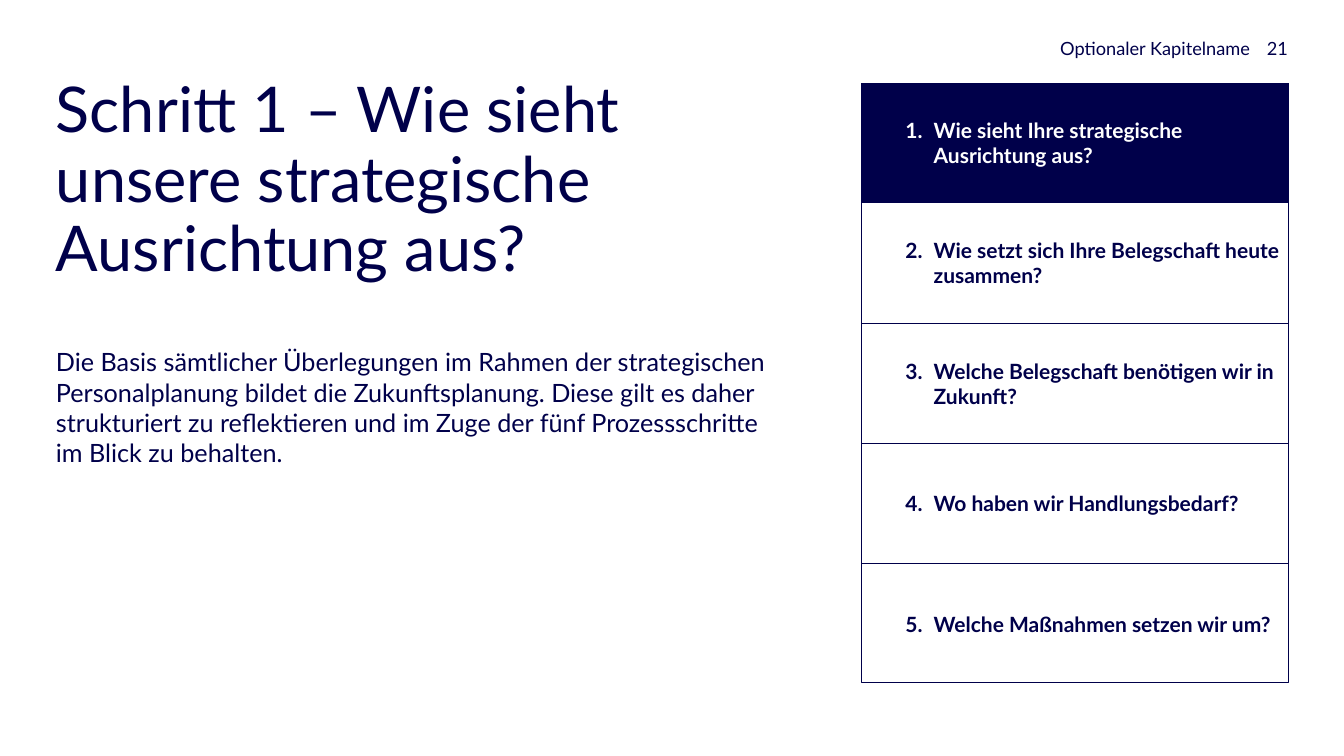
from dataclasses import dataclass

from lxml import etree
from pptx import Presentation
from pptx.dml.color import RGBColor
from pptx.enum.shapes import MSO_CONNECTOR, MSO_SHAPE
from pptx.enum.text import MSO_ANCHOR, MSO_AUTO_SIZE, PP_ALIGN
from pptx.oxml.ns import qn
from pptx.util import Emu, Pt

RECTANGLE = MSO_SHAPE.RECTANGLE
STRAIGHT = MSO_CONNECTOR.STRAIGHT
TOP, MIDDLE, BOTTOM = MSO_ANCHOR.TOP, MSO_ANCHOR.MIDDLE, MSO_ANCHOR.BOTTOM
LEFT, RIGHT = PP_ALIGN.LEFT, PP_ALIGN.RIGHT
NO_AUTOFIT = MSO_AUTO_SIZE.NONE

NAVY = RGBColor(0x00, 0x00, 0x4A)
WHITE = RGBColor(0xFF, 0xFF, 0xFF)
FONT = "Lato"
EMU_PER_PX = 9144  # 100 px to the inch

STEPS = [
    "Wie sieht Ihre strategische Ausrichtung aus?",
    "Wie setzt sich Ihre Belegschaft heute zusammen?",
    "Welche Belegschaft benötigen wir in Zukunft?",
    "Wo haben wir Handlungsbedarf?",
    "Welche Maßnahmen setzen wir um?",
]
ACTIVE_STEP = 1
STEP_HEIGHT = 235
LAST_STEP_OFFSET = 954
DIVIDER_GAP = 2
HANGING_INDENT = 56


@dataclass(frozen=True)
class Box:
    left: int
    top: int
    width: int
    height: int


@dataclass(frozen=True)
class TextStyle:
    size: int
    color: RGBColor = NAVY
    bold: bool = False
    anchor: MSO_ANCHOR = TOP
    align: PP_ALIGN = LEFT
    line_spacing: float = 1.0
    insets: tuple[int, int, int, int] = (0, 0, 0, 0)


@dataclass(frozen=True)
class Step:
    number: int
    text: str
    box: Box


PANEL = Box(1709, 166, 847, 1188)
HEADER_STYLE = TextStyle(26, anchor=BOTTOM, align=RIGHT)


def px(value: int) -> Emu:
    return Emu(value * EMU_PER_PX)


def edges(box: Box) -> tuple[Emu, Emu, Emu, Emu]:
    return px(box.left), px(box.top), px(box.width), px(box.height)


def set_values(target, values: dict) -> None:
    for name, value in values.items():
        setattr(target, name, value)


def set_bullet(paragraph, number: int | None, color: RGBColor) -> None:
    """Number the paragraph, or remove its bullet when number is None."""
    properties = paragraph._p.get_or_add_pPr()
    indent = 0 if number is None else px(HANGING_INDENT)
    properties.set("marL", str(indent))
    properties.set("indent", str(-indent))
    if number is None:
        etree.SubElement(properties, qn("a:buNone"))
        return
    bullet_color = etree.SubElement(properties, qn("a:buClr"))
    etree.SubElement(bullet_color, qn("a:srgbClr"), val=str(color))
    etree.SubElement(properties, qn("a:buFont"), typeface="+mj-lt")
    etree.SubElement(properties, qn("a:buAutoNum"),
                     type="arabicPeriod", startAt=str(number))


def write_text(shape, text: str, style: TextStyle, number: int | None = None) -> None:
    frame = shape.text_frame
    left, top, right, bottom = (px(inset) for inset in style.insets)
    set_values(frame, {
        "word_wrap": True, "auto_size": NO_AUTOFIT, "vertical_anchor": style.anchor,
        "margin_left": left, "margin_top": top,
        "margin_right": right, "margin_bottom": bottom,
    })
    paragraph = frame.paragraphs[0]
    set_bullet(paragraph, number, style.color)
    set_values(paragraph, {"alignment": style.align, "space_before": Pt(0),
                           "line_spacing": style.line_spacing})
    run = paragraph.add_run()
    run.text = text
    set_values(run.font, {"name": FONT, "size": Pt(style.size), "bold": style.bold})
    run.font.color.rgb = style.color


def fill_placeholder(shape, box: Box, text: str, style: TextStyle) -> None:
    set_values(shape, dict(zip(("left", "top", "width", "height"), edges(box))))
    write_text(shape, text, style)


def add_text(slide, box: Box, text: str, style: TextStyle,
             number: int | None = None) -> None:
    write_text(slide.shapes.add_textbox(*edges(box)), text, style, number)


def add_rectangle(slide, box: Box, fill: RGBColor | None = None):
    shape = slide.shapes.add_shape(RECTANGLE, *edges(box))
    shape.shadow.inherit = False
    if fill is None:
        shape.fill.background()
    else:
        shape.fill.solid()
        shape.fill.fore_color.rgb = fill
    shape.line.color.rgb = NAVY
    shape.line.width = Pt(0.75)
    return shape


def add_divider(slide, top: int) -> None:
    divider = slide.shapes.add_connector(
        STRAIGHT, px(PANEL.left), px(top), px(PANEL.left + PANEL.width), px(top))
    divider.line.color.rgb = NAVY
    divider.line.width = Pt(0.5)
    etree.SubElement(divider._element.spPr, qn("a:effectLst"))


def add_step(slide, step: Step) -> None:
    active = step.number == ACTIVE_STEP
    style = TextStyle(30, WHITE if active else NAVY, bold=True, anchor=MIDDLE,
                      insets=(87, 16, 16, 16))
    if active:
        write_text(add_rectangle(slide, step.box, NAVY), step.text, style, step.number)
    else:
        add_text(slide, step.box, step.text, style, step.number)


def main() -> None:
    presentation = Presentation()
    presentation.slide_width, presentation.slide_height = px(2666), px(1500)
    slide = presentation.slides.add_slide(presentation.slide_layouts[1])

    # Title and introduction
    fill_placeholder(slide.shapes.title, Box(111, 153, 1493, 299),
                     "Schritt 1 – Wie sieht unsere strategische Ausrichtung aus?",
                     TextStyle(90, line_spacing=0.92))
    fill_placeholder(slide.placeholders[1], Box(111, 688, 1455, 666),
                     "Die Basis sämtlicher Überlegungen im Rahmen der strategischen "
                     "Personalplanung bildet die Zukunftsplanung. Diese gilt es daher "
                     "strukturiert zu reflektieren und im Zuge der fünf Prozessschritte "
                     "im Blick zu behalten.", TextStyle(36))

    # Chapter name and page number
    add_text(slide, Box(111, 0, 2369, 118), "Optionaler Kapitelname", HEADER_STYLE)
    add_text(slide, Box(2480, 0, 75, 118), "21", HEADER_STYLE)

    # Step panel
    add_rectangle(slide, PANEL)
    for index, text in enumerate(STEPS):
        top = PANEL.top + index * LAST_STEP_OFFSET // (len(STEPS) - 1)
        box = Box(PANEL.left, top, PANEL.width, STEP_HEIGHT)
        add_step(slide, Step(index + 1, text, box))
        if index > ACTIVE_STEP:
            add_divider(slide, top - DIVIDER_GAP)

    presentation.save("out.pptx")


if __name__ == "__main__":
    main()
